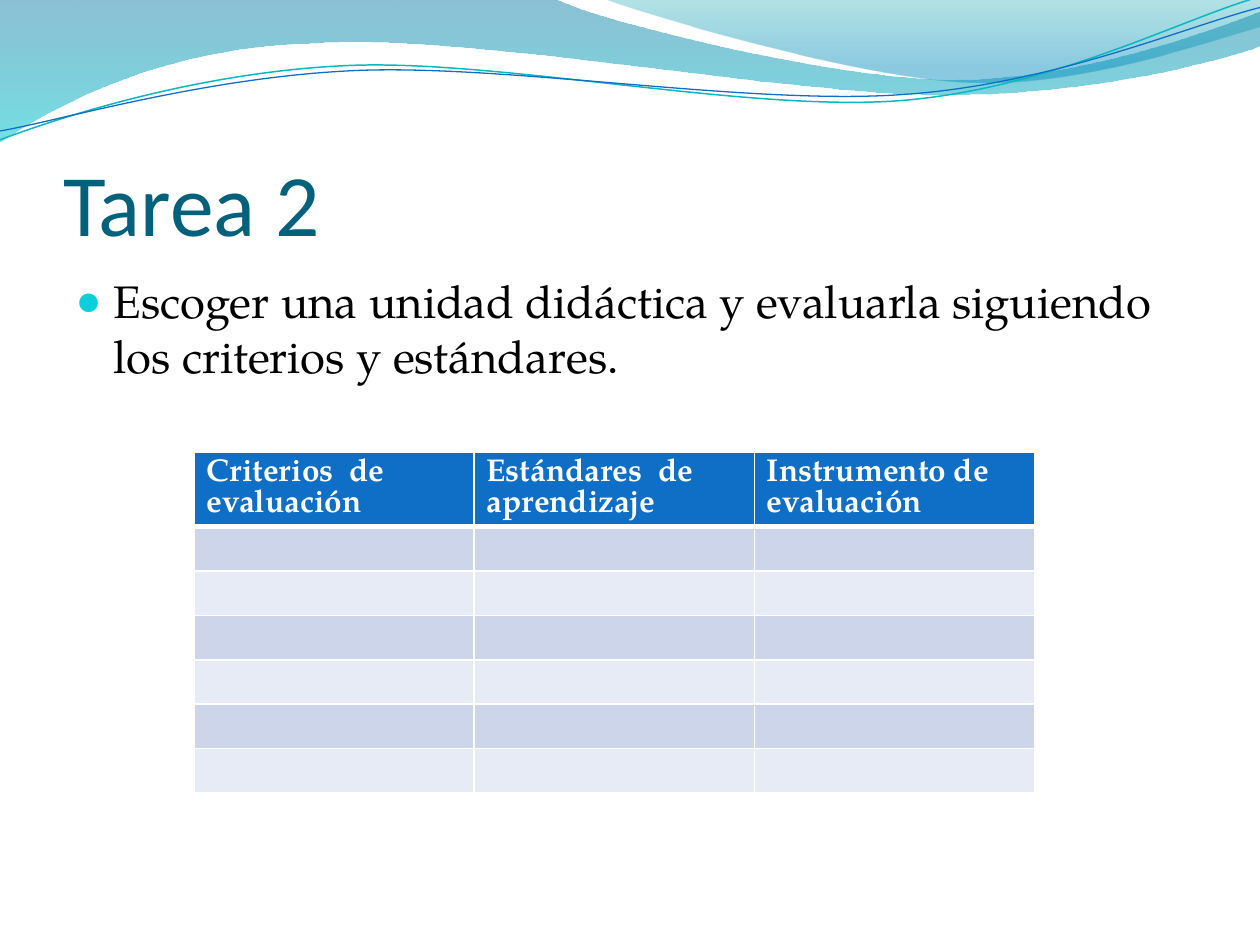
import math

import lxml.etree
import pptx
import pptx.dml.color
import pptx.enum.text
import pptx.oxml
import pptx.oxml.ns
import pptx.util

Inches, Pt = pptx.util.Inches, pptx.util.Pt
qn = pptx.oxml.ns.qn

# Content
TITLE = "Tarea 2"
TASK = "Escoger una unidad didáctica y evaluarla siguiendo los criterios y estándares."
HEADERS = ["Criterios  de evaluación", "Estándares  de aprendizaje", "Instrumento de evaluación"]
EMPTY_ROWS = 6
TITLE_FONT, BODY_FONT = "Calibri", "TeX Gyre Pagella"
HEADER_FILL, BAND_FILLS = "0F6FC6", ["CCD5EA", "E7EBF5"]

# Waves: each step is a list of one point (straight) or three points (Bézier curve)
FILLED_WAVES = [
    {"outline": [[(0, 0)], [(4.4, -0.01)],
                 [(4.76, 0.17), (6.64, 0.63), (7.58, 0.63)],
                 [(8.53, 0.63), (9.58, 0.26), (10, 0.09)],
                 [(10.01, 0.36)],
                 [(9.83, 0.44), (8.7, 0.76), (7.46, 0.75)],
                 [(6.22, 0.75), (3.82, 0.28), (2.57, 0.34)],
                 [(1.29, 0.36), (0.46, 0.83), (-0.01, 1.13)]],
     "stops": [(0, "0074A1", 45), (1, "00C6CF", 55)]},
    {"outline": [[(4.79, -0.01)],
                 [(5.09, 0.11), (6.82, 0.62), (7.69, 0.65)],
                 [(8.56, 0.69), (9.61, 0.32), (10, 0.21)],
                 [(10, 0)]],
     "stops": [(0, "00A1A9", 30), (0.8, "008BBF", 45)]},
]
LINE_WAVES = [
    {"outline": [[(0, 1.11)],
                 [(0.48, 0.93), (1.58, 0.57), (2.77, 0.52)],
                 [(3.95, 0.47), (5.93, 0.89), (7.13, 0.8)],
                 [(8.33, 0.71), (9.38, 0.15), (9.98, -0.02)]],
     "color": "0AB8BF", "width": 0.85},
    {"outline": [[(0, 1.04)],
                 [(0.47, 0.96), (1.64, 0.61), (2.83, 0.56)],
                 [(4.03, 0.51), (5.97, 0.84), (7.17, 0.75)],
                 [(8.36, 0.67), (9.41, 0.21), (10, 0.06)]],
     "color": "0F6FC6", "width": 0.75},
]
LINE_TILT = -2.7


def rgb(value):
    return pptx.dml.color.RGBColor.from_string(value)


def set_font(paragraph, name, size, color, bold=False):
    font = paragraph.font
    font.name, font.size, font.bold = name, Pt(size), bold
    font.color.rgb = rgb(color)


def turn(outline, degrees):
    """Rotate an outline about the slide's top left corner."""
    cosine, sine = math.cos(math.radians(degrees)), math.sin(math.radians(degrees))
    return [[(x * cosine - y * sine, x * sine + y * cosine) for x, y in step]
            for step in outline]


def add_wave(slide, outline, close):
    """Build the outline through its anchors, then bend the curved steps."""
    steps = [[(Inches(x), Inches(y)) for x, y in step] for step in outline]
    anchors = [step[-1] for step in steps]
    builder = slide.shapes.build_freeform(*anchors[0])
    builder.add_line_segments(anchors[1:], close=close)
    shape = builder.convert_to_shape()
    shape.shadow.inherit = False
    segments = list(shape._element.iter(qn("a:lnTo")))
    for segment, step in zip(segments, steps[1:]):
        if len(step) == 3:
            curve = lxml.etree.Element(qn("a:cubicBezTo"))
            for x, y in step:
                lxml.etree.SubElement(curve, qn("a:pt"),
                                      x=str(x - shape.left), y=str(y - shape.top))
            segment.getparent().replace(segment, curve)
    return shape


def tilt(shape, degrees):
    """Rotate a shape about its center, as if about the slide's top left corner."""
    x, y = shape.left + shape.width / 2, shape.top + shape.height / 2
    [[(new_x, new_y)]] = turn([[(x, y)]], degrees)
    shape.left, shape.top = round(shape.left + new_x - x), round(shape.top + new_y - y)
    shape.rotation = degrees


def fill_gradient(shape, stops):
    shape.fill.gradient()
    shape.fill.gradient_angle = 270
    for stop, (position, color, _) in zip(shape.fill.gradient_stops, stops):
        stop.position = position
        stop.color.rgb = rgb(color)
    colors = shape.fill._xPr.iter(qn("a:srgbClr"))
    for element, (_, _, opacity) in zip(colors, stops):
        lxml.etree.SubElement(element, qn("a:alpha"), val=str(opacity * 1000))


def place(shape, left, top, width, height):
    shape.left, shape.top = Inches(left), Inches(top)
    shape.width, shape.height = Inches(width), Inches(height)


def add_bullet(paragraph, character, color, percent, indent):
    properties = paragraph._p.get_or_add_pPr()
    properties.set("marL", str(Inches(indent)))
    properties.set("indent", str(-Inches(indent)))
    bullet_color = lxml.etree.SubElement(properties, qn("a:buClr"))
    lxml.etree.SubElement(bullet_color, qn("a:srgbClr"), val=color)
    lxml.etree.SubElement(properties, qn("a:buSzPct"), val=str(percent * 1000))
    lxml.etree.SubElement(properties, qn("a:buChar"), char=character)


def set_borders(cell, top_width, bottom_width):
    properties = cell._tc.get_or_add_tcPr()
    widths = {"a:lnL": 1, "a:lnR": 1, "a:lnT": top_width, "a:lnB": bottom_width}
    for index, (tag, width) in enumerate(widths.items()):
        line = lxml.etree.Element(qn(tag), w=str(Pt(width)))
        fill = lxml.etree.SubElement(line, qn("a:solidFill"))
        lxml.etree.SubElement(fill, qn("a:srgbClr"), val="FFFFFF")
        properties.insert(index, line)


def main():
    presentation = pptx.Presentation()
    presentation.slide_width, presentation.slide_height = Inches(10), Inches(7.5)
    slide = presentation.slides.add_slide(presentation.slide_layouts[1])

    # Waves across the top
    for wave in FILLED_WAVES:
        shape = add_wave(slide, wave["outline"], close=True)
        fill_gradient(shape, wave["stops"])
        shape.line.fill.background()
    for wave in LINE_WAVES:
        shape = add_wave(slide, turn(wave["outline"], -LINE_TILT), close=False)
        tilt(shape, LINE_TILT)
        shape.fill.background()
        shape.line.color.rgb = rgb(wave["color"])
        shape.line.width = Pt(wave["width"])

    # Title
    title = slide.shapes.title
    place(title, 0.5, 0.77, 9, 1.25)
    frame = title.text_frame
    frame.text = TITLE
    frame.auto_size = pptx.enum.text.MSO_AUTO_SIZE.NONE
    frame.vertical_anchor = pptx.enum.text.MSO_ANCHOR.BOTTOM
    frame.margin_left = frame.margin_right = frame.margin_bottom = 0
    frame.paragraphs[0].alignment = pptx.enum.text.PP_ALIGN.LEFT
    set_font(frame.paragraphs[0], TITLE_FONT, 50, "04617B")

    # Task
    body = slide.placeholders[1]
    place(body, 0.5, 2.12, 9, 1.16)
    frame = body.text_frame
    frame.text = TASK
    frame.auto_size = pptx.enum.text.MSO_AUTO_SIZE.NONE
    paragraph = frame.paragraphs[0]
    add_bullet(paragraph, "●", "0BD0D9", 95, 0.3)
    paragraph.space_before = Pt(0)
    set_font(paragraph, BODY_FONT, 26, "000000")

    # Evaluation table
    rows = [HEADERS] + [[""] * len(HEADERS)] * EMPTY_ROWS
    heights = [0.58] + [0.35] * EMPTY_ROWS
    table = slide.shapes.add_table(len(rows), len(HEADERS), Inches(1.54), Inches(3.59),
                                   Inches(6.67), Inches(sum(heights))).table
    for row_index, (texts, height) in enumerate(zip(rows, heights)):
        is_header = row_index == 0
        table.rows[row_index].height = Inches(height)
        for cell, text in zip(table.rows[row_index].cells, texts):
            cell.text = text
            cell.fill.solid()
            cell.fill.fore_color.rgb = rgb(HEADER_FILL if is_header
                                           else BAND_FILLS[(row_index - 1) % 2])
            set_borders(cell, 3 if row_index == 1 else 1, 3 if is_header else 1)
            set_font(cell.text_frame.paragraphs[0], BODY_FONT, 18,
                     "FFFFFF" if is_header else "000000", is_header)

    presentation.save("out.pptx")


if __name__ == "__main__":
    main()
